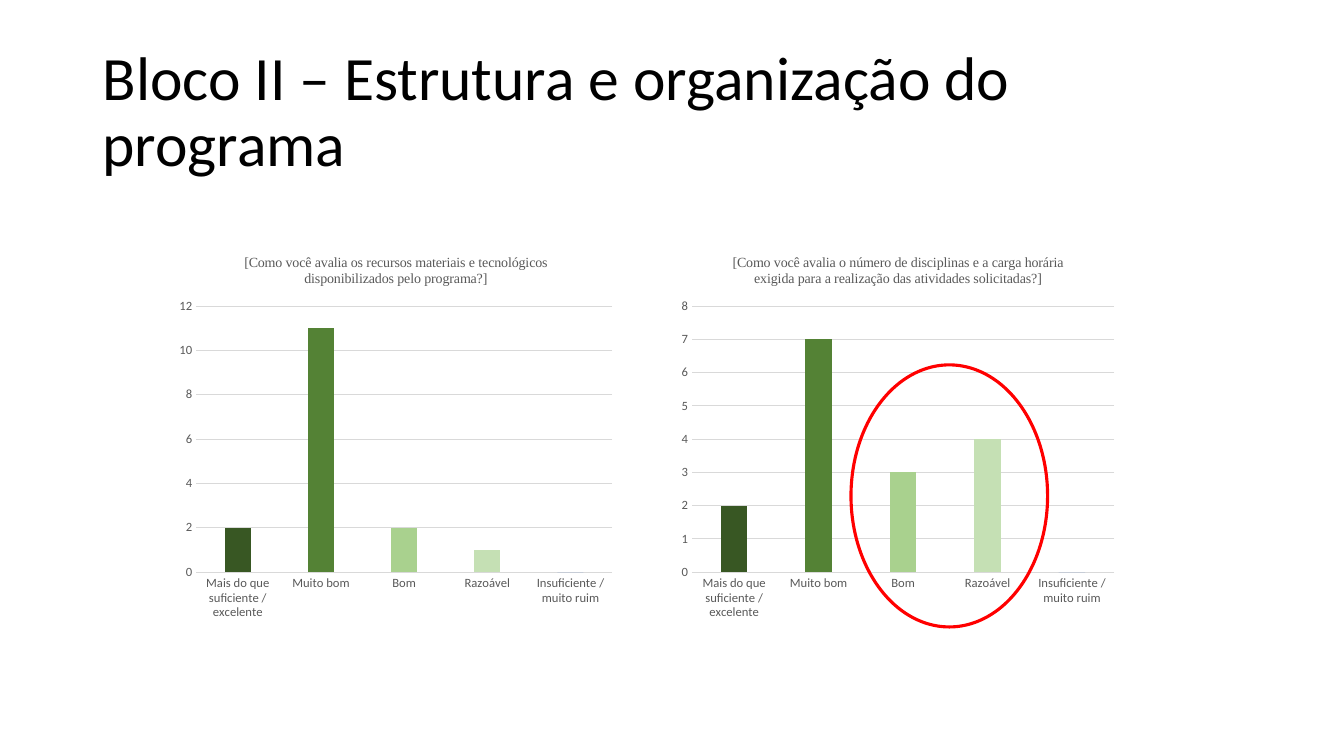
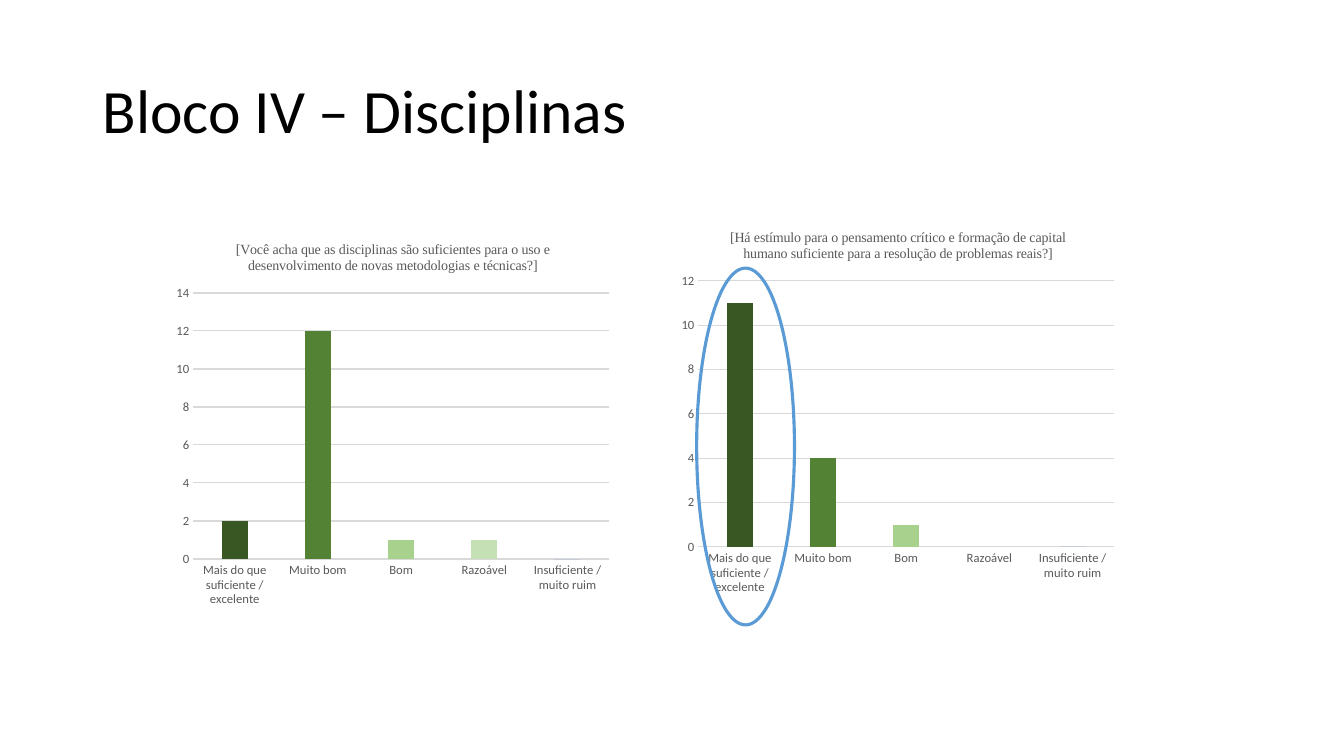
from pptx import Presentation
from pptx.chart.data import CategoryChartData
from pptx.dml.color import RGBColor
from pptx.enum.chart import XL_CHART_TYPE, XL_TICK_MARK
from pptx.enum.shapes import MSO_SHAPE
from pptx.enum.text import MSO_ANCHOR
from pptx.util import Emu, Pt

COLUMNS = XL_CHART_TYPE.COLUMN_CLUSTERED
NO_TICKS = XL_TICK_MARK.NONE
ELLIPSE = MSO_SHAPE.OVAL
MIDDLE = MSO_ANCHOR.MIDDLE

# Shared style: 100 px to the inch
EMU_PER_PX = 9144
BODY_FONT = "Calibri"
QUESTION_FONT = "Times New Roman"
BLACK = RGBColor(0x00, 0x00, 0x00)
GRAY = RGBColor(0x59, 0x59, 0x59)
LIGHT_GRAY = RGBColor(0xD9, 0xD9, 0xD9)
RED = RGBColor(0xFF, 0x00, 0x00)
BLUE = RGBColor(0x5B, 0x9B, 0xD5)
SERIES_BLUE = RGBColor(0x44, 0x72, 0xC4)
GREENS = [
    RGBColor(0x38, 0x57, 0x23),
    RGBColor(0x54, 0x82, 0x35),
    RGBColor(0xA9, 0xD1, 0x8E),
    RGBColor(0xC5, 0xE0, 0xB4),
]
RATINGS = ["Mais do que suficiente / excelente", "Muito bom", "Bom",
           "Razoável", "Insuficiente / muito ruim"]
CHART_WIDTH, CHART_HEIGHT = 447, 387


def px(*lengths):
    return [Emu(length * EMU_PER_PX) for length in lengths]


def set_font(font, name, size, color):
    font.name = name
    font.size = Pt(size)
    font.bold = False
    font.color.rgb = color


def set_line(line, color, width):
    line.color.rgb = color
    line.width = Pt(width)


def add_title(slide, text):
    frame = slide.shapes.add_textbox(*px(92, 40, 1150, 145)).text_frame
    frame.word_wrap = True
    frame.vertical_anchor = MIDDLE
    paragraph = frame.paragraphs[0]
    paragraph.text = text
    paragraph.line_spacing = 0.9
    set_font(paragraph.font, BODY_FONT, 44, BLACK)


def add_rating_chart(slide, left, top, question, votes):
    data = CategoryChartData()
    data.categories = RATINGS
    data.add_series(question, votes)
    box = px(left, top, CHART_WIDTH, CHART_HEIGHT)
    chart = slide.shapes.add_chart(COLUMNS, *box, data).chart
    set_font(chart.font, BODY_FONT, 10, BLACK)
    chart.has_legend = False

    # Question as chart title
    chart.has_title = True
    chart.chart_title.include_in_layout = False
    paragraph = chart.chart_title.text_frame.paragraphs[0]
    paragraph.text = question
    set_font(paragraph.font, QUESTION_FONT, 10, GRAY)

    # Axes and gridlines
    for axis in (chart.category_axis, chart.value_axis):
        axis.major_tick_mark = NO_TICKS
        axis.minor_tick_mark = NO_TICKS
        set_font(axis.tick_labels.font, BODY_FONT, 9, GRAY)
    set_line(chart.category_axis.format.line, LIGHT_GRAY, 0.75)
    chart.value_axis.format.line.fill.background()
    set_line(chart.value_axis.major_gridlines.format.line, LIGHT_GRAY, 0.75)

    # Columns, one green for each rating
    plot = chart.plots[0]
    plot.gap_width = 219
    plot.overlap = -27
    plot.vary_by_categories = False
    series = plot.series[0]
    series.format.fill.solid()
    series.format.fill.fore_color.rgb = SERIES_BLUE
    for index, green in enumerate(GREENS):
        fill = series.points[index].format.fill
        fill.solid()
        fill.fore_color.rgb = green


def add_highlight(slide, left, top, width, height, color):
    ellipse = slide.shapes.add_shape(ELLIPSE, *px(left, top, width, height))
    ellipse.shadow.inherit = False
    ellipse.fill.background()
    set_line(ellipse.line, color, 2.25)


def add_block_slide(presentation, title, charts, highlight):
    slide = presentation.slides.add_slide(presentation.slide_layouts[6])
    add_title(slide, title)
    for chart in charts:
        add_rating_chart(slide, *chart)
    add_highlight(slide, *highlight)


def main():
    presentation = Presentation()
    presentation.slide_width, presentation.slide_height = px(1333, 750)

    # Programme structure
    add_block_slide(
        presentation,
        "Bloco II – Estrutura e organização do programa",
        [
            (169, 236, "[Como você avalia os recursos materiais e tecnológicos "
             "disponibilizados pelo programa?]", [2, 11, 2, 1, 0]),
            (667, 236, "[Como você avalia o número de disciplinas e a carga "
             "horária exigida para a realização das atividades solicitadas?]",
             [2, 7, 3, 4, 0]),
        ],
        (844, 362, 195, 260, RED),
    )

    # Courses
    add_block_slide(
        presentation,
        "Bloco IV – Disciplinas",
        [
            (166, 223, "[Você acha que as disciplinas são suficientes para o "
             "uso e desenvolvimento de novas metodologias e técnicas?]",
             [2, 12, 1, 1, 0]),
            (667, 211, "[Há estímulo para o pensamento crítico e formação de "
             "capital humano suficiente para a resolução de problemas reais?]",
             [11, 4, 1, 0, 0]),
        ],
        (691, 266, 97, 354, BLUE),
    )
    presentation.save("out.pptx")


if __name__ == "__main__":
    main()
